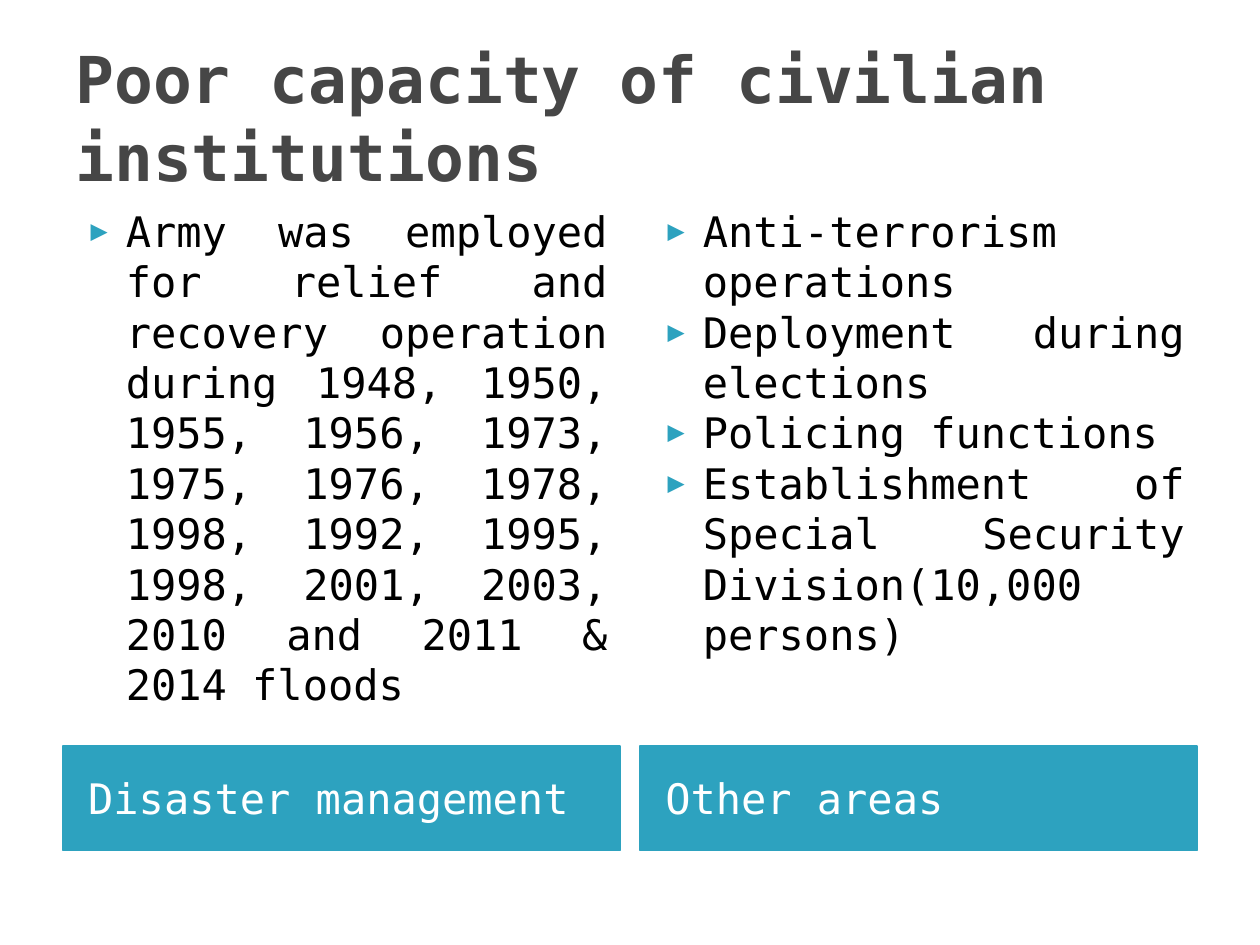
"""Build a slide comparing two areas of poor civilian capacity."""
import lxml.etree
import pptx
import pptx.dml.color
import pptx.enum.shapes
import pptx.enum.text
import pptx.oxml.ns
import pptx.util

Pt = pptx.util.Pt
RGBColor = pptx.dml.color.RGBColor
ALIGN = pptx.enum.text.PP_ALIGN
ANCHOR = pptx.enum.text.MSO_ANCHOR
TEAL = RGBColor(0x2D, 0xA2, 0xBF)
GREY = RGBColor(0x46, 0x46, 0x46)
BLACK = RGBColor(0, 0, 0)
WHITE = RGBColor(255, 255, 255)

COLUMN_LEFT = 36
COLUMN_WIDTH = 318.24
COLUMN_STEP = 329.76
COLUMNS = [
    ("Disaster management", [
        "Army was employed for relief and recovery operation during 1948, 1950, "
        "1955, 1956, 1973, 1975, 1976, 1978, 1998, 1992, 1995, 1998, 2001, 2003, "
        "2010 and 2011 & 2014 floods",
    ]),
    ("Other areas", [
        "Anti-terrorism operations",
        "Deployment during elections",
        "Policing functions",
        "Establishment of Special Security Division(10,000 persons)",
    ]),
]


class SlideBuilder:
    """Hold the style and the current slide."""

    font_name = "DejaVu Sans Mono"
    body_size = 24
    title_size = 36.9
    bullet_indent = 28.8
    bullet_hanging = -20.16

    def __init__(self, slide):
        """Keep the slide to draw on."""
        self.slide = slide

    def apply(self, target, values):
        """Set each named format value on the target."""
        for name, value in values.items():
            setattr(target, name, value)

    def add_text(self, paragraph, text, size, color, bold=False):
        """Add one styled run to a paragraph."""
        run = paragraph.add_run()
        run.text = text
        self.apply(run.font, {"name": self.font_name, "size": Pt(size), "bold": bold})
        run.font.color.rgb = color

    def textbox(self, left, top, width, height, anchor):
        """Add a wrapping text box and return its text frame."""
        shape = self.slide.shapes.add_textbox(Pt(left), Pt(top), Pt(width), Pt(height))
        self.apply(shape.text_frame, {"word_wrap": True, "vertical_anchor": anchor})
        return shape.text_frame

    def title(self, text, left, top, width, height):
        """Add the slide title."""
        frame = self.textbox(left, top, width, height, ANCHOR.MIDDLE)
        self.add_text(frame.paragraphs[0], text, self.title_size, GREY, True)

    def label(self, text, left, top, width, height):
        """Add a filled column label."""
        shape = self.slide.shapes.add_shape(
            pptx.enum.shapes.MSO_SHAPE.RECTANGLE, Pt(left), Pt(top), Pt(width), Pt(height))
        shape.shadow.inherit = False
        shape.fill.solid()
        shape.fill.fore_color.rgb = TEAL
        shape.line.color.rgb = TEAL
        shape.line.width = Pt(0.75)
        self.apply(shape.text_frame, {
            "word_wrap": True, "vertical_anchor": ANCHOR.MIDDLE, "margin_left": Pt(14.4)})
        paragraph = shape.text_frame.paragraphs[0]
        paragraph.alignment = ALIGN.LEFT
        self.add_text(paragraph, text, self.body_size, WHITE)

    def bullet(self, paragraph):
        """Give a paragraph a hanging triangle bullet."""
        properties = paragraph._p.get_or_add_pPr()
        properties.set("marL", str(Pt(self.bullet_indent)))
        properties.set("indent", str(Pt(self.bullet_hanging)))
        qn = pptx.oxml.ns.qn
        color = lxml.etree.SubElement(properties, qn("a:buClr"))
        lxml.etree.SubElement(color, qn("a:srgbClr"), val=str(TEAL))
        lxml.etree.SubElement(properties, qn("a:buSzPct"), val="68000")
        lxml.etree.SubElement(properties, qn("a:buFont"), typeface=self.font_name)
        lxml.etree.SubElement(properties, qn("a:buChar"), char="▶")

    def bullets(self, items, left, top, width, height):
        """Add a justified bullet list."""
        frame = self.textbox(left, top, width, height, ANCHOR.TOP)
        for index, item in enumerate(items):
            paragraph = frame.add_paragraph() if index else frame.paragraphs[0]
            self.bullet(paragraph)
            paragraph.alignment = ALIGN.JUSTIFY
            self.add_text(paragraph, item, self.body_size, BLACK)


def main():
    """Create and save the presentation."""
    presentation = pptx.Presentation()
    presentation.slide_width = Pt(720)
    presentation.slide_height = Pt(540)
    builder = SlideBuilder(presentation.slides.add_slide(presentation.slide_layouts[6]))
    builder.title("Poor capacity of civilian institutions", COLUMN_LEFT, 21.6, 648, 90)
    for index, (heading, items) in enumerate(COLUMNS):
        left = COLUMN_LEFT + index * COLUMN_STEP
        builder.label(heading, left, 426.24, COLUMN_WIDTH, 59.76)
        builder.bullets(items, left, 113.76, COLUMN_WIDTH, 310.32)
    presentation.save("out.pptx")


if __name__ == "__main__":
    main()
